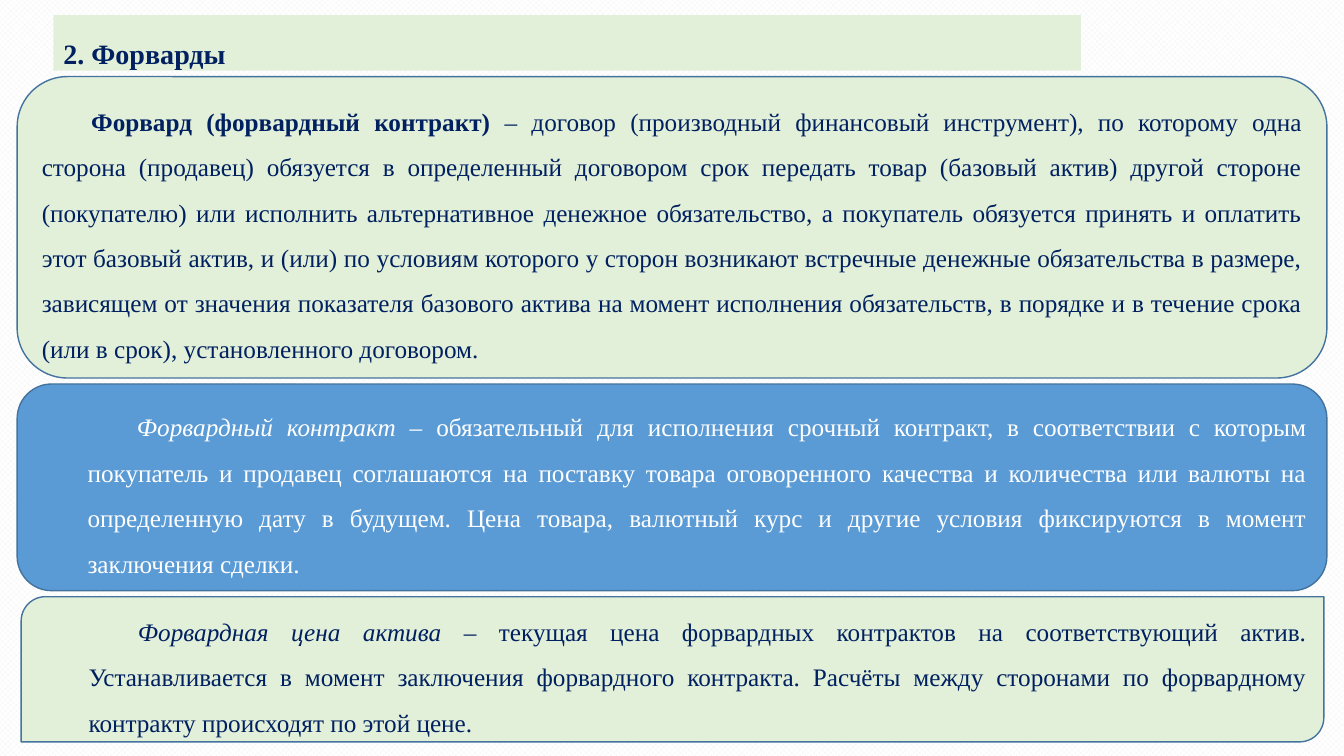
from dataclasses import dataclass

from pptx import Presentation
from pptx.dml.color import RGBColor
from pptx.enum.dml import MSO_PATTERN
from pptx.enum.shapes import MSO_SHAPE
from pptx.enum.text import MSO_ANCHOR, MSO_AUTO_SIZE, PP_ALIGN
from pptx.util import Inches, Pt

RECT = MSO_SHAPE.RECTANGLE
ROUND = MSO_SHAPE.ROUNDED_RECTANGLE
DIAGONAL = MSO_SHAPE.ROUND_2_DIAG_RECTANGLE
DIAMONDS = MSO_PATTERN.OUTLINED_DIAMOND
TOP, MIDDLE = MSO_ANCHOR.TOP, MSO_ANCHOR.MIDDLE
GROW = MSO_AUTO_SIZE.SHAPE_TO_FIT_TEXT
JUSTIFY = PP_ALIGN.JUSTIFY


@dataclass(frozen=True)
class Theme:
    font: str = "Times New Roman"
    title_size: int = 20
    body_size: int = 18
    navy: str = "002060"
    white: str = "FFFFFF"
    green: str = "E2F0D9"
    blue: str = "5B9BD5"
    outline: str = "43739E"
    pattern: str = "F2F2F2"


def rgb(code):
    return RGBColor.from_string(code)


def add_run(p, text, *, font, size, color, bold=False, italic=False):
    r = p.add_run()
    r.text = text
    r.font.name = font
    r.font.size = Pt(size)
    r.font.color.rgb = rgb(color)
    r.font.bold = bold
    r.font.italic = italic


class SlideBuilder:
    def __init__(self, prs, theme):
        self.theme = theme
        self.s = prs.slides.add_slide(prs.slide_layouts[6])

    def background(self):
        fill = self.s.background.fill
        fill.patterned()
        fill.pattern = DIAMONDS
        fill.fore_color.rgb = rgb(self.theme.pattern)
        fill.back_color.rgb = rgb(self.theme.white)

    def box(self, kind, left, top, width, height, fill, outlined=True):
        sp = self.s.shapes.add_shape(
            kind, Inches(left), Inches(top), Inches(width), Inches(height))
        sp.shadow.inherit = False
        sp.fill.solid()
        sp.fill.fore_color.rgb = rgb(fill)
        if outlined:
            sp.line.color.rgb = rgb(self.theme.outline)
            sp.line.width = Pt(1)
        else:
            sp.line.fill.background()
        return sp

    def paragraph(self, sp, anchor, after):
        tf = sp.text_frame
        tf.word_wrap = True
        tf.vertical_anchor = anchor
        p = tf.paragraphs[0]
        p.alignment = JUSTIFY
        p.line_spacing = 1.5
        p.space_after = Pt(after)
        return p

    def title(self, text, left, top, width, height):
        t = self.theme
        sp = self.box(RECT, left, top, width, height, t.green, outlined=False)
        p = self.paragraph(sp, TOP, after=8)
        sp.text_frame.auto_size = GROW
        add_run(p, text, font=t.font, size=t.title_size, color=t.navy, bold=True)

    def definition(self, kind, left, top, width, height, term, text, *,
                   fill, color, margin=0.5, after=8, bold=False):
        t = self.theme
        sp = self.box(kind, left, top, width, height, fill)
        p = self.paragraph(sp, MIDDLE, after)
        pPr = p._p.get_or_add_pPr()
        pPr.set("marL", str(Inches(margin)))
        pPr.set("indent", str(Inches(0.49)))
        style = dict(font=t.font, size=t.body_size, color=color)
        add_run(p, term, bold=bold, italic=not bold, **style)
        add_run(p, text, **style)


def main():
    prs = Presentation()
    prs.slide_width, prs.slide_height = Inches(13.33), Inches(7.5)
    t = Theme()
    slide = SlideBuilder(prs, t)
    slide.background()

    # Heading
    slide.title("2. Форварды", 0.53, 0.15, 10.19, 0.55)

    # Forward: legal definition
    slide.definition(
        ROUND, 0.17, 0.76, 12.99, 2.99,
        "Форвард (форвардный контракт) ",
        "– договор (производный финансовый инструмент), по которому одна "
        "сторона (продавец) обязуется в определенный договором срок передать "
        "товар (базовый актив) другой стороне (покупателю) или исполнить "
        "альтернативное денежное обязательство, а покупатель обязуется принять "
        "и оплатить этот базовый актив, и (или) по условиям которого у сторон "
        "возникают встречные денежные обязательства в размере, зависящем от "
        "значения показателя базового актива на момент исполнения обязательств, "
        "в порядке и в течение срока (или в срок), установленного договором.",
        fill=t.green, color=t.navy, margin=0, after=0, bold=True)

    # Forward contract
    slide.definition(
        ROUND, 0.17, 3.81, 12.99, 2.05,
        "Форвардный контракт –",
        " обязательный для исполнения срочный контракт, в соответствии с "
        "которым покупатель и продавец соглашаются на поставку товара "
        "оговоренного качества и количества или валюты на определенную дату в "
        "будущем. Цена товара, валютный курс и другие условия фиксируются в "
        "момент заключения сделки.",
        fill=t.blue, color=t.white)

    # Forward price
    slide.definition(
        DIAGONAL, 0.21, 5.92, 12.92, 1.44,
        "Форвардная цена актива",
        " – текущая цена форвардных контрактов на соответствующий актив. "
        "Устанавливается в момент заключения форвардного контракта. Расчёты "
        "между сторонами по форвардному контракту происходят по этой цене.",
        fill=t.green, color=t.navy)

    prs.save("out.pptx")


if __name__ == "__main__":
    main()
